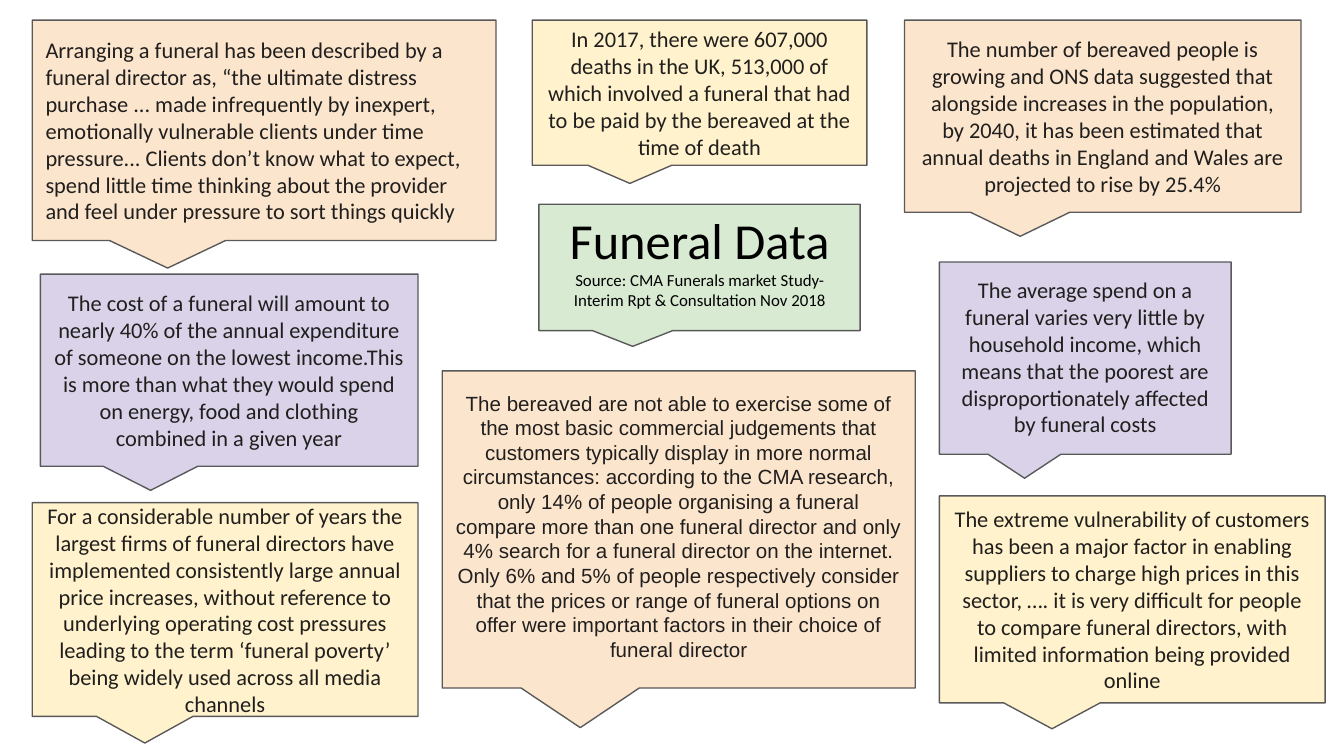
from dataclasses import dataclass

from pptx import Presentation
from pptx.dml.color import RGBColor
from pptx.enum.shapes import MSO_SHAPE as Shape
from pptx.enum.text import MSO_ANCHOR as Anchor, PP_ALIGN as Align
from pptx.slide import Slide
from pptx.util import Pt

PX = 9144  # EMU: 100 px to the inch
WIDE = 1000 * PX
HIGH = WIDE * 9 // 16
PAD = 10
TAIL = (-0.208, 0.625, 0)

PEACH = RGBColor(0xFC, 0xE5, 0xCD)
LILAC = RGBColor(0xD9, 0xD2, 0xE9)
CREAM = RGBColor(0xFF, 0xF2, 0xCC)
GREEN = RGBColor(0xD9, 0xEA, 0xD3)
EDGE = RGBColor(0x59, 0x59, 0x59)
INK = RGBColor(0x20, 0x1F, 0x1E)
BLACK = RGBColor(0, 0, 0)


@dataclass(frozen=True)
class Callout:
    left: int
    top: int
    width: int
    height: int
    fill: RGBColor
    text: str
    sizes: tuple[int, ...] = (12,)  # one per paragraph
    font: str = "Calibri"
    ink: RGBColor = INK
    align: Align = Align.CENTER
    foot: int = PAD  # bottom inset


CALLOUTS = [
    Callout(329, 276, 352, 236, PEACH,
            "The bereaved are not able to exercise some of the most basic "
            "commercial judgements that customers typically display in more "
            "normal circumstances: according to the CMA research, only 14% of "
            "people organising a funeral compare more than one funeral "
            "director and only 4% search for a funeral director on the "
            "internet. Only 6% and 5% of people respectively consider that "
            "the prices or range of funeral options on offer were important "
            "factors in their choice of funeral director",
            sizes=(11,), font="Arial", foot=15),
    Callout(24, 15, 345, 164, PEACH,
            "Arranging a funeral has been described by a funeral director as, "
            "“the ultimate distress purchase ... made infrequently by "
            "inexpert, emotionally vulnerable clients under time pressure... "
            "Clients don’t know what to expect, spend little time thinking "
            "about the provider and feel under pressure to sort things "
            "quickly", align=Align.LEFT),
    Callout(699, 195, 217, 143, LILAC,
            "The average spend on a funeral varies very little by household "
            "income, which means that the poorest are disproportionately "
            "affected by funeral costs", foot=12),
    Callout(673, 15, 295, 143, PEACH,
            "The number of bereaved people is growing and ONS data suggested "
            "that alongside increases in the population, by 2040, it has been "
            "estimated that annual deaths in England and Wales are projected "
            "to rise by 25.4%"),
    Callout(396, 15, 249, 108, CREAM,
            "In 2017, there were 607,000 deaths in the UK, 513,000 of which "
            "involved a funeral that had to be paid by the bereaved at the "
            "time of death"),
    Callout(24, 374, 287, 159, CREAM,
            "For a considerable number of years the largest firms of funeral "
            "directors have implemented consistently large annual price "
            "increases, without reference to underlying operating cost "
            "pressures leading to the term ‘funeral poverty’ being widely "
            "used across all media channels"),
    Callout(30, 204, 281, 143, LILAC,
            "The cost of a funeral will amount to nearly 40% of the annual "
            "expenditure of someone on the lowest income.This is more than "
            "what they would spend on energy, food and clothing combined in a "
            "given year"),
    Callout(699, 369, 287, 154, CREAM,
            "The extreme vulnerability of customers has been a major factor "
            "in enabling suppliers to charge high prices in this sector, …. "
            "it is very difficult for people to compare funeral directors, "
            "with limited information being provided online"),
    Callout(401, 152, 239, 94, GREEN,
            "Funeral Data\n"
            "Source: CMA Funerals market Study- Interim Rpt & Consultation "
            "Nov 2018", sizes=(27, 9), ink=BLACK, foot=22),
]


def draw(slide: Slide, item: Callout) -> None:
    box = slide.shapes.add_shape(
        Shape.ROUNDED_RECTANGULAR_CALLOUT, item.left * PX, item.top * PX,
        item.width * PX, item.height * PX)
    for i, value in enumerate(TAIL):
        box.adjustments[i] = value
    box.shadow.inherit = False
    box.fill.solid()
    box.fill.fore_color.rgb = item.fill
    box.line.color.rgb = EDGE
    box.line.width = Pt(0.75)

    frame = box.text_frame
    frame.word_wrap = True
    frame.vertical_anchor = Anchor.MIDDLE
    frame.margin_left = frame.margin_right = frame.margin_top = PAD * PX
    frame.margin_bottom = item.foot * PX
    frame.text = item.text
    for para, size in zip(frame.paragraphs, item.sizes):
        para.alignment = item.align
        for run in para.runs:
            run.font.name = item.font
            run.font.size = Pt(size)
            run.font.color.rgb = item.ink


def main() -> None:
    deck = Presentation()
    deck.slide_width = WIDE
    deck.slide_height = HIGH
    slide = deck.slides.add_slide(deck.slide_layouts[6])
    for item in CALLOUTS:
        draw(slide, item)
    deck.save("out.pptx")


if __name__ == "__main__":
    main()
